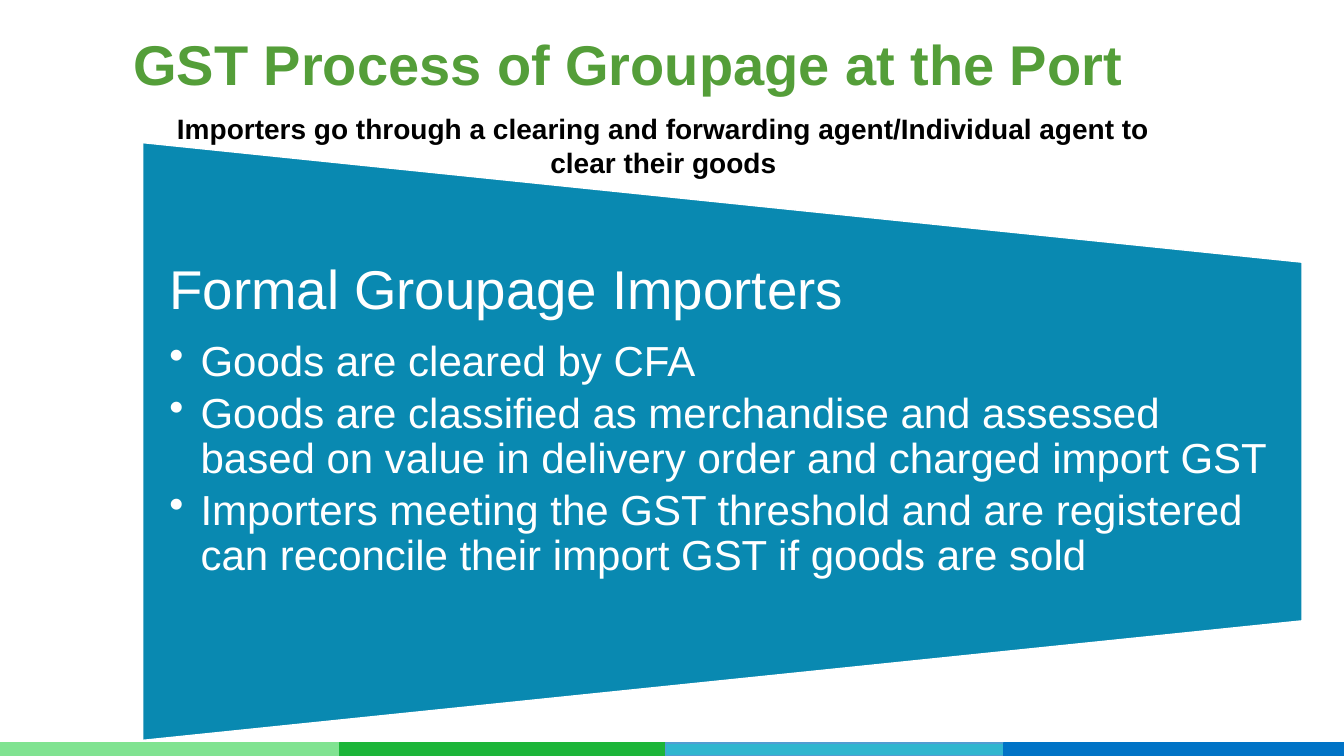
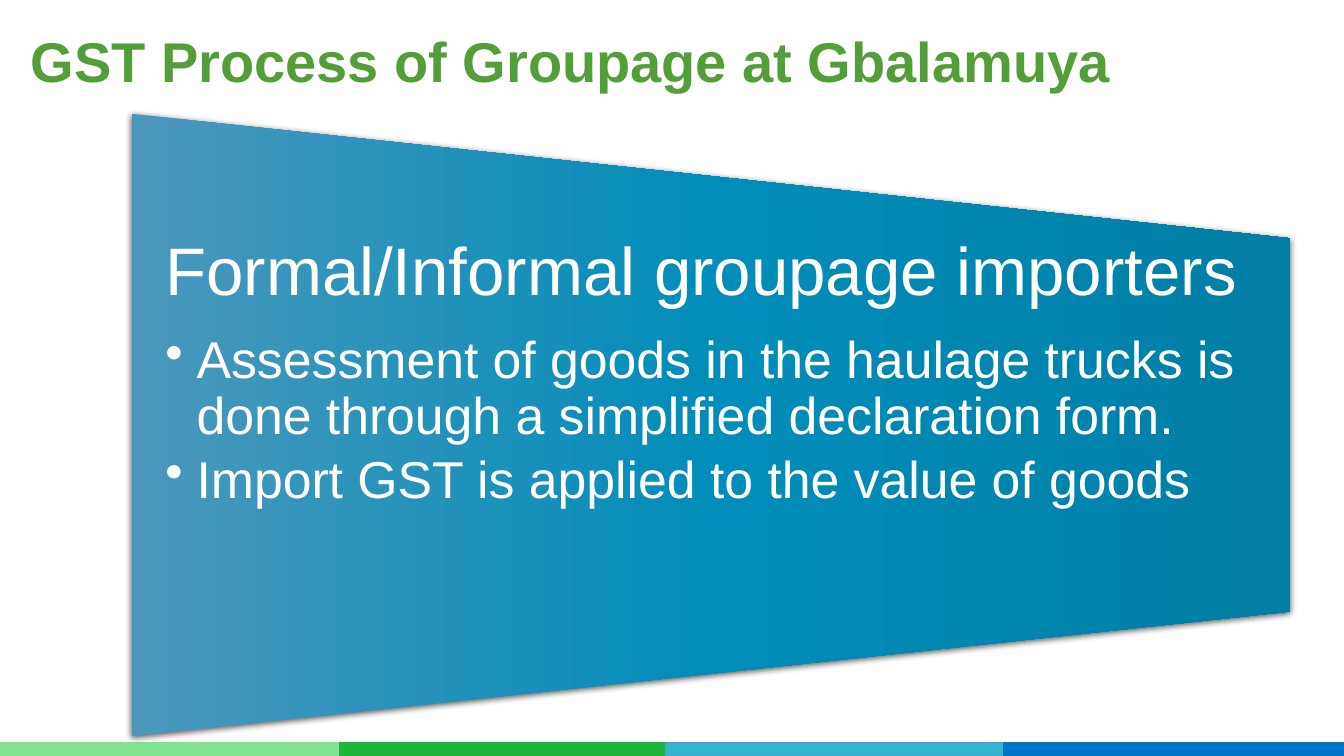
"""Build two slides on the GST process for groupage goods."""
from lxml import etree
from pptx import Presentation
from pptx.dml.color import RGBColor
from pptx.enum import shapes, text
from pptx.oxml import parse_xml
from pptx.oxml.ns import nsdecls, qn
from pptx.util import Inches, Pt

FONT = "Arial"
GREEN = RGBColor(0x54, 0x9E, 0x39)
BLACK = RGBColor(0x00, 0x00, 0x00)
WHITE = RGBColor(0xFF, 0xFF, 0xFF)
PANEL_BLUE = RGBColor(0x09, 0x89, 0xB1)
BAND_BLUE = RGBColor(0x00, 0x73, 0xC6)
BAND_GREEN = RGBColor(0x1C, 0xB5, 0x39)
BAND_LIGHT_GREEN = RGBColor(0x80, 0xE3, 0x91)
BAND_CYAN = RGBColor(0x30, 0xB6, 0xCF)
CYAN_EDGE = RGBColor(0x52, 0x9D, 0xD2)
GRADIENT_STOPS = [
    (0, RGBColor(0x4B, 0x97, 0xBC)),
    (50, RGBColor(0x01, 0x8D, 0xB9)),
    (100, RGBColor(0x00, 0x7E, 0xA5)),
]
BANDS = [
    (0, BAND_LIGHT_GREEN, BAND_LIGHT_GREEN),
    (3.37, BAND_GREEN, BAND_GREEN),
    (6.6, BAND_CYAN, CYAN_EDGE),
    (9.96, BAND_BLUE, BAND_BLUE),
]
SLIDES = [
    {
        "title": "GST Process of Groupage at the Port",
        "title_box": (0.45, 0.25, 11.55, 0.83),
        "subtitle": "Importers go through a clearing and forwarding agent/Individual agent to clear their goods",
        "panel_box": (4.2, -1.37, 5.93, 11.5),
        "gradient": False,
        "text_box": (1.41, 2.6, 11.5, 3.56),
        "inset": 0.27,
        "heading": "Formal Groupage Importers",
        "heading_size": 39,
        "bullet_size": 30,
        "bullets": [
            "Goods are cleared by CFA",
            "Goods are classified as merchandise and assessed based on value in delivery order and charged import GST",
            "Importers meeting the GST threshold and are registered can reconcile their import GST if goods are sold",
        ],
    },
    {
        "title": "GST Process of Groupage at Gbalamuya",
        "title_box": (0.1, 0.36, 11.11, 0.56),
        "subtitle": None,
        "panel_box": (3.97, -1.53, 6.17, 11.49),
        "gradient": True,
        "text_box": (1.31, 2.36, 11.49, 3.7),
        "inset": 0.33,
        "heading": "Formal/Informal groupage importers",
        "heading_size": 48,
        "bullet_size": 37,
        "bullets": [
            "Assessment of goods in the haulage trucks is done through a simplified declaration form.",
            "Import GST is applied to the value of goods",
        ],
    },
]


def write(frame, content, size, color, bold=False, align=None, bullet=False,
          line_spacing=0.9, before=0, after=0):
    """Write one paragraph, using the empty first paragraph if there is one."""
    paragraph = frame.paragraphs[0]
    if paragraph.runs:
        paragraph = frame.add_paragraph()
    if bullet:
        properties = paragraph._p.get_or_add_pPr()
        properties.set("marL", str(Inches(0.31)))
        properties.set("indent", str(-Inches(0.31)))
        etree.SubElement(properties, qn("a:buChar")).set("char", "•")
    paragraph.alignment = align
    paragraph.line_spacing = line_spacing
    paragraph.space_before = Pt(before)
    paragraph.space_after = Pt(after)
    run = paragraph.add_run()
    run.text = content
    run.font.name = FONT
    run.font.size = Pt(size)
    run.font.bold = bold
    run.font.color.rgb = color


def add_filled(slide, preset, box, fill, line):
    """Add a flat shape with a fill and a 1 pt line."""
    shape = slide.shapes.add_shape(preset, *map(Inches, box))
    shape.shadow.inherit = False
    shape.fill.solid()
    shape.fill.fore_color.rgb = fill
    shape.line.color.rgb = line
    shape.line.width = Pt(1)
    return shape


presentation = Presentation()
presentation.slide_width = Inches(13.33)
presentation.slide_height = Inches(7.5)
layout = presentation.slide_layouts.get_by_name("Title Only")

for number, content in enumerate(SLIDES):
    slide = presentation.slides.add_slide(layout)

    if number == 0:
        for left, fill, line in BANDS:
            band = add_filled(slide, shapes.MSO_SHAPE.RECTANGLE,
                              (left, 7.37, 3.37, 0.13), fill, line)
            layout.shapes.element.append(band.element)

    title = slide.shapes.title
    title.left, title.top, title.width, title.height = map(Inches, content["title_box"])
    title.text_frame.auto_size = text.MSO_AUTO_SIZE.NONE
    title.text_frame.vertical_anchor = text.MSO_ANCHOR.MIDDLE
    write(title.text_frame, content["title"], 40, GREEN, bold=True, align=text.PP_ALIGN.CENTER)

    panel = add_filled(slide, shapes.MSO_SHAPE.FLOWCHART_MANUAL_OPERATION,
                       content["panel_box"], PANEL_BLUE, WHITE)
    panel.rotation = 270
    if content["gradient"]:
        panel.line.fill.background()
        stops = "".join(
            f'<a:gs pos="{position * 1000}"><a:srgbClr val="{color}"/></a:gs>'
            for position, color in GRADIENT_STOPS)
        gradient = parse_xml(
            f'<a:gradFill {nsdecls("a")} rotWithShape="1"><a:gsLst>{stops}</a:gsLst>'
            '<a:lin ang="5400000" scaled="0"/></a:gradFill>')
        properties = panel.element.spPr
        properties.replace(properties.find(qn("a:solidFill")), gradient)
        shadow = parse_xml(
            f'<a:outerShdw {nsdecls("a")} blurRad="{Pt(4.5)}" dist="{Pt(1.5)}" dir="5400000" '
            'rotWithShape="0"><a:srgbClr val="000000"><a:alpha val="63000"/></a:srgbClr></a:outerShdw>')
        properties.find(qn("a:effectLst")).append(shadow)

    body = slide.shapes.add_textbox(*map(Inches, content["text_box"])).text_frame
    body.word_wrap = True
    body.margin_left = body.margin_right = Inches(content["inset"])
    body.margin_top = body.margin_bottom = 0
    heading_size, bullet_size = content["heading_size"], content["bullet_size"]
    write(body, content["heading"], heading_size, WHITE, after=round(heading_size * 0.35))
    for bullet in content["bullets"]:
        write(body, bullet, bullet_size, WHITE, bullet=True, after=round(bullet_size * 0.15, 1))

    if content["subtitle"]:
        subtitle = slide.shapes.add_textbox(Inches(1.43), Inches(1.06), Inches(10.3), Inches(0.77)).text_frame
        subtitle.word_wrap = True
        write(subtitle, content["subtitle"], 20, BLACK, bold=True,
              align=text.PP_ALIGN.CENTER, line_spacing=1.0, after=12)

presentation.save("out.pptx")
